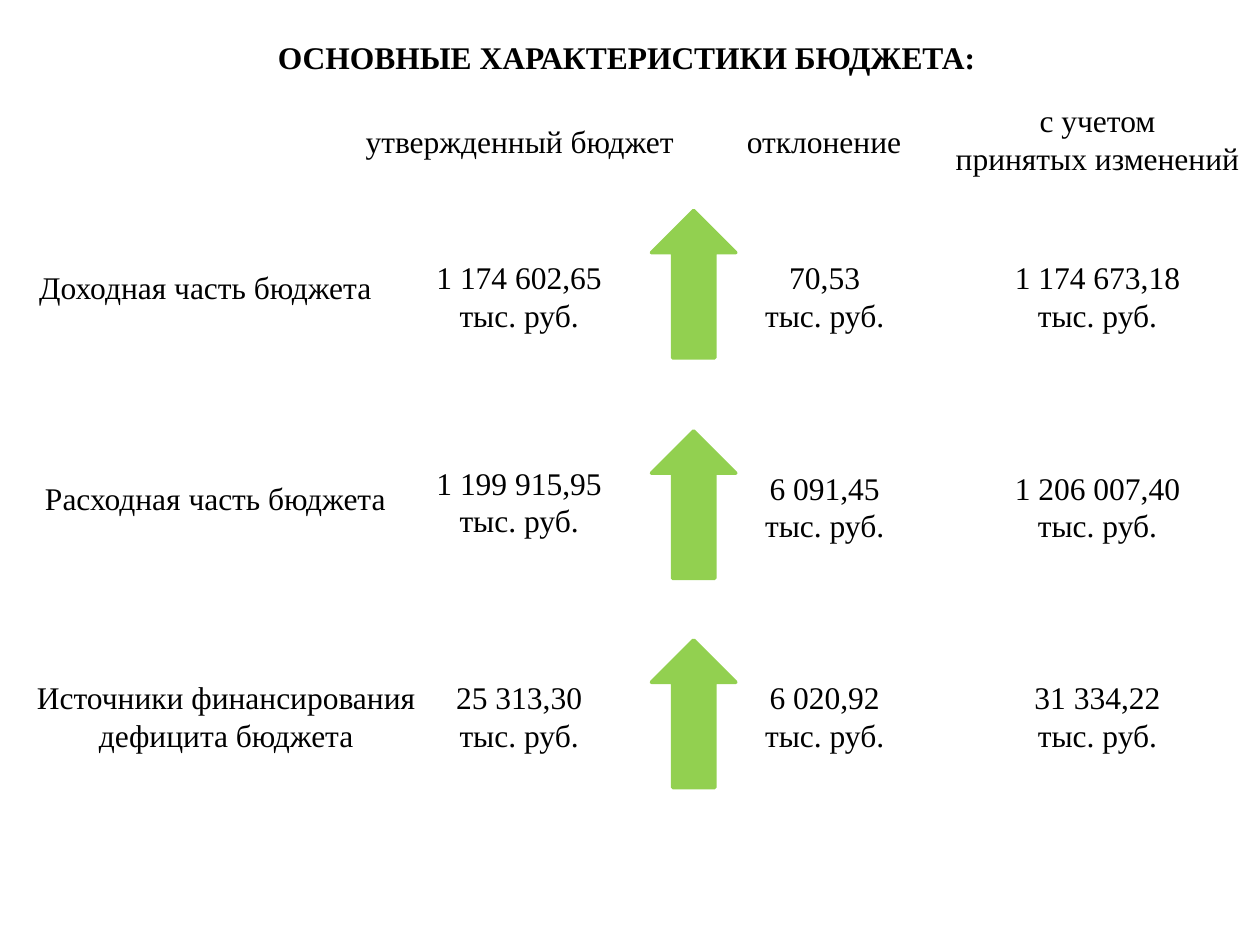
from pptx import Presentation
from pptx.dml.color import RGBColor
from pptx.enum import shapes, text
from pptx.util import Inches, Pt

COLORS = {"text": "000000", "arrow": "92D050"}
FONT = "Times New Roman"
UNIT = "тыс. руб."
TITLE = "ОСНОВНЫЕ ХАРАКТЕРИСТИКИ БЮДЖЕТА:"

# Column headings: text, left, top, width
HEADS = [
    ("утвержденный бюджет", 2.75, 0.92, 2.75),
    ("отклонение", 5.75, 0.92, 1.58),
    ("с учетом\nпринятых изменений", 7.42, 0.75, 2.58),
]
# Value columns: left, width
COLS = [(3.33, 1.58), (5.92, 1.25), (7.92, 1.58)]
# Rows: label, (left, top, width), arrow top, value tops, values
ROWS = [
    ("Доходная часть бюджета", (0.17, 2.08, 2.92), 1.67,
     (2, 2, 2), ("1 174 602,65", "70,53", "1 174 673,18")),
    ("Расходная часть бюджета", (0.25, 3.75, 2.92), 3.42,
     (3.63, 3.67, 3.67), ("1 199 915,95", "6 091,45", "1 206 007,40")),
    ("Источники финансирования дефицита бюджета", (0.17, 5.33, 3.25), 5.08,
     (5.33, 5.33, 5.33), ("25 313,30", "6 020,92", "31 334,22")),
]


def style(box, words, bold=False):
    frame = box.text_frame
    frame.text = words
    frame.word_wrap = True
    frame.vertical_anchor = text.MSO_ANCHOR.TOP
    for para in frame.paragraphs:
        para.alignment = text.PP_ALIGN.CENTER
        for run in para.runs:
            font = run.font
            font.name, font.size, font.bold = FONT, Pt(18), bold
            font.color.rgb = RGBColor.from_string(COLORS["text"])


def label(words, left, top, width, high):
    box = slide.shapes.add_textbox(*map(Inches, (left, top, width, high)))
    style(box, words)


def arrow(top):
    mark = slide.shapes.add_shape(
        shapes.MSO_SHAPE.DOWN_ARROW, *map(Inches, (5.17, top, 0.67, 1.17)))
    mark.rotation = 180
    mark.shadow.inherit = False
    green = RGBColor.from_string(COLORS["arrow"])
    mark.fill.solid()
    mark.fill.fore_color.rgb = green
    mark.line.color.rgb = green
    mark.line.width = Pt(2)


deck = Presentation()
deck.slide_width, deck.slide_height = Inches(10), Inches(7.5)
slide = deck.slides.add_slide(deck.slide_layouts[5])

# Title
title = slide.shapes.title
title.left, title.top, title.width, title.height = map(
    Inches, (2.08, 0.25, 5.79, 0.4))
style(title, TITLE, bold=True)
title.text_frame.auto_size = text.MSO_AUTO_SIZE.NONE

# Column headings
for words, left, top, width in HEADS:
    label(words, left, top, width, 0.71 if "\n" in words else 0.4)

# Budget rows
for name, (left, top, width), tip, tops, values in ROWS:
    label(name, left, top, width, 0.71 if len(name) > 30 else 0.4)
    arrow(tip)
    for (x, wide), y, value in zip(COLS, tops, values):
        label(f"{value}\n{UNIT}", x, y, wide, 0.71)

deck.save("out.pptx")
